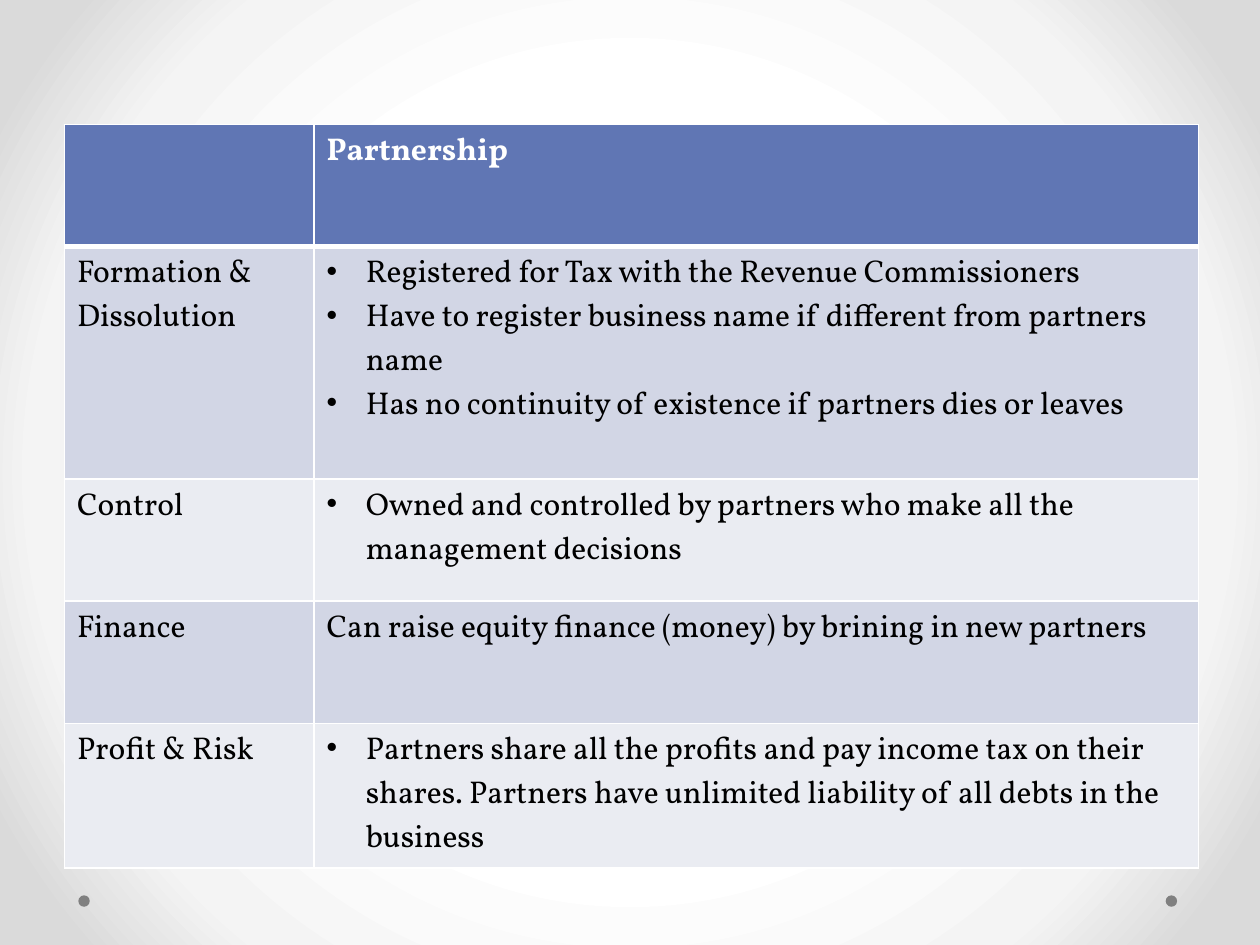
from lxml.etree import SubElement
from pptx import Presentation
from pptx.dml.color import RGBColor
from pptx.enum.shapes import MSO_SHAPE
from pptx.oxml import parse_xml
from pptx.oxml.ns import qn
from pptx.util import Cm, Pt


def rgb(code):
    return RGBColor.from_string(code)


def edge(props, side, width):
    line = SubElement(props, qn(f"a:ln{side}"), w=str(Pt(width)))
    fill = SubElement(line, qn("a:solidFill"))
    SubElement(fill, qn("a:srgbClr"), val="FFFFFF")


deck = Presentation()
deck.slide_width, deck.slide_height = Cm(25.4), Cm(19.05)
slide = deck.slides.add_slide(deck.slide_layouts[6])

# Round background gradient
slide.background.fill.gradient()
grad = next(slide.element.iter(qn("a:gradFill")))
stops = "".join(
    f'<a:gs pos="{pos}000"><a:srgbClr val="{tone}"/></a:gs>'
    for pos, tone in [(50, "FFFFFF"), (76, "F4F4F4"), (92, "DADADA")]
)
grad.getparent().replace(grad, parse_xml(
    '<a:gradFill xmlns:a="http://schemas.openxmlformats.org/drawingml/2006/main"'
    f' rotWithShape="1"><a:gsLst>{stops}</a:gsLst><a:path path="circle">'
    '<a:fillToRect l="50000" t="50000" r="50000" b="50000"/></a:path></a:gradFill>'
))

# Footer dots
for left in (23.5, 1.58):
    dot = slide.shapes.add_shape(
        MSO_SHAPE.OVAL, Cm(left), Cm(18.05), Cm(0.23), Cm(0.23))
    dot.shadow.inherit = False
    dot.fill.solid()
    dot.fill.fore_color.rgb = rgb("808080")
    dot.line.fill.background()

# Table text: a list is bulleted, a string is plain
rows = [
    ("", "Partnership"),
    ("Formation & Dissolution", [
        "Registered for Tax with the Revenue Commissioners",
        "Have to register business name if different from partners name",
        "Has no continuity of existence if partners dies or leaves",
    ]),
    ("Control", [
        "Owned and controlled by partners who make all the management decisions",
    ]),
    ("Finance", "Can raise equity finance (money) by brining in new partners"),
    ("Profit & Risk", [
        "Partners share all the profits and pay income tax on their shares. "
        "Partners have unlimited liability of all debts in the business",
    ]),
]
widths = [5.03, 17.83]
heights = [2.46, 4.69, 2.46, 2.46, 2.92]
table = slide.shapes.add_table(
    len(rows), len(widths), Cm(1.3), Cm(2.51),
    Cm(sum(widths)), Cm(sum(heights))).table
for col, width in zip(table.columns, widths):
    col.width = Cm(width)
for row, height in zip(table.rows, heights):
    row.height = Cm(height)

# Fill the cells
for r, row in enumerate(rows):
    head = r == 0
    tone = "6076B4" if head else ("EAECF2", "D2D6E5")[r % 2]
    style = {"name": "Vollkorn", "size": Pt(18), "bold": head}
    for c, text in enumerate(row):
        cell = table.cell(r, c)
        props = cell._tc.get_or_add_tcPr()
        sides = {"L": 1, "R": 1, "T": 3 if r == 1 else 1, "B": 3 if head else 1}
        for side, width in sides.items():
            edge(props, side, width)
        cell.fill.solid()
        cell.fill.fore_color.rgb = rgb(tone)

        listed = isinstance(text, list)
        cell.text = "\n".join(text) if listed else text
        for para in cell.text_frame.paragraphs:
            for key, value in style.items():
                setattr(para.font, key, value)
            para.font.color.rgb = rgb("FFFFFF" if head else "000000")
            for run in para.runs:
                for key, value in style.items():
                    setattr(run.font, key, value)
                run.font.color.rgb = rgb("FFFFFF" if head else "000000")
            if listed:
                form = para._p.get_or_add_pPr()
                form.set("marL", str(Cm(0.79)))
                form.set("indent", str(-Cm(0.79)))
                mark = parse_xml(
                    '<a:buChar xmlns:a="http://schemas.openxmlformats.org/'
                    'drawingml/2006/main" char="•"/>')
                form.insert(0, mark)

deck.save("out.pptx")
